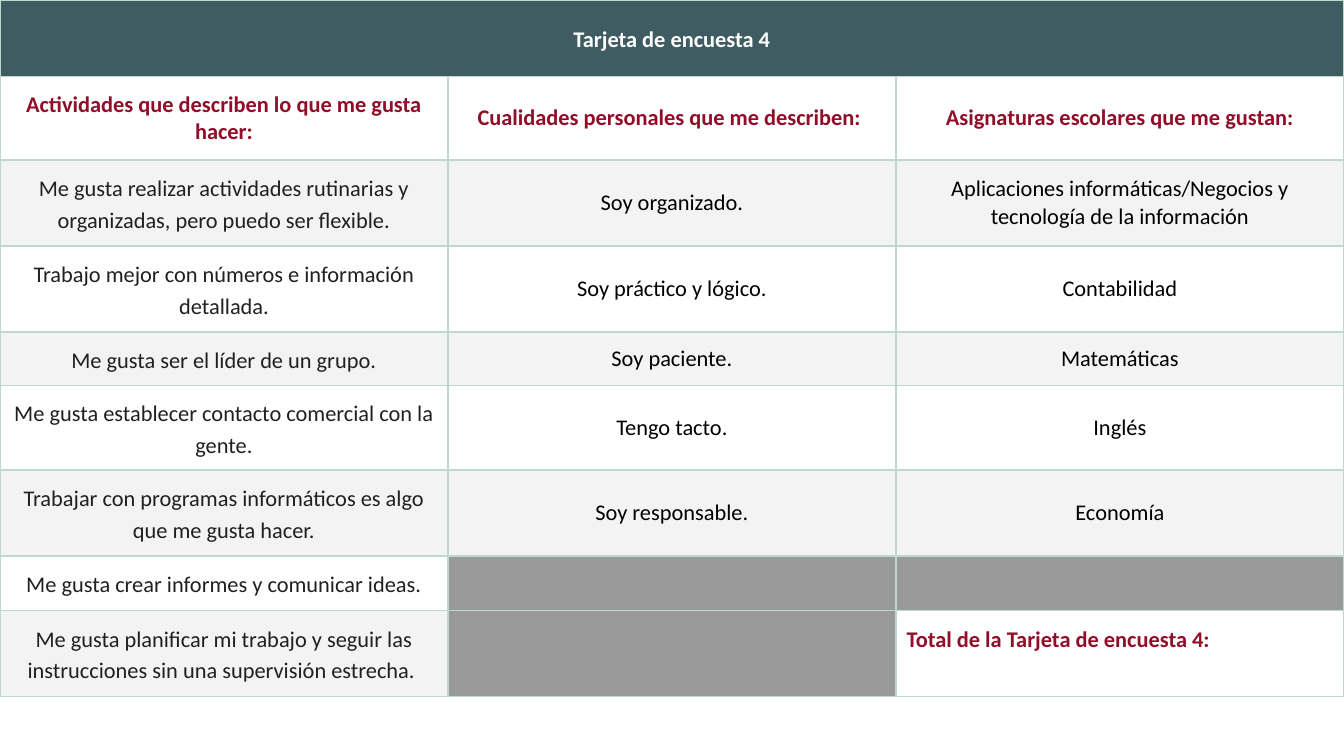
"""Builds a survey card slide as a three-column table."""
from pptx import Presentation
from pptx import util as u
from pptx.dml.color import RGBColor
from pptx.enum import text
from pptx.oxml import parse_xml
from pptx.oxml.ns import nsdecls

COLORS = {"white": "FFFFFF", "teal": "3E5C61", "red": "910D28", "band": "F3F3F3",
          "gray": "999999", "ink": "231F20", "black": "000000", "border": "BED7D3"}
WIDTH = u.Inches(10)
HEIGHT = WIDTH * 9 // 16
MARGIN = 0.08
ROW_HEIGHTS = [0.57, 0.62, 0.64, 0.64, 0.4, 0.53, 0.64, 0.4, 0.64]
TITLE = "Tarjeta de encuesta 4"
TOTAL = "Total de la Tarjeta de encuesta 4:"
HEADINGS = ["Actividades que describen lo que me gusta hacer:",
            "Cualidades personales que me describen: ",
            "Asignaturas escolares que me gustan:"]
ANSWERS = [
    ["Me gusta realizar actividades rutinarias y organizadas, pero puedo ser flexible.",
     "Soy organizado.", "Aplicaciones informáticas/Negocios y tecnología de la información"],
    ["Trabajo mejor con números e información detallada.",
     "Soy práctico y lógico.", "Contabilidad"],
    ["Me gusta ser el líder de un grupo.", "Soy paciente.", "Matemáticas"],
    ["Me gusta establecer contacto comercial con la gente.", "Tengo tacto.", "Inglés"],
    ["Trabajar con programas informáticos es algo que me gusta hacer.",
     "Soy responsable.", "Economía"],
    ["Me gusta crear informes y comunicar ideas.", "", ""],
    ["Me gusta planificar mi trabajo y seguir las instrucciones sin una supervisión estrecha. ",
     "", TOTAL],
]


def style_cell(cell, fill):
    properties = cell._tc.get_or_add_tcPr()
    for index, side in enumerate("LRTB"):
        properties.insert(index, parse_xml(
            f'<a:ln{side} {nsdecls("a")} w="{u.Pt(1)}"><a:solidFill>'
            f'<a:srgbClr val="{COLORS["border"]}"/></a:solidFill></a:ln{side}>'))
    cell.fill.solid()
    cell.fill.fore_color.rgb = RGBColor.from_string(COLORS[fill])


def write_cell(cell, words, color, bold=False, line_spacing=1.0, before=0, after=0,
               align=text.PP_ALIGN.CENTER, bottom=MARGIN):
    cell.margin_left = cell.margin_right = cell.margin_top = u.Inches(MARGIN)
    cell.margin_bottom = u.Inches(bottom)
    cell.vertical_anchor = text.MSO_ANCHOR.MIDDLE
    cell.text_frame.text = words
    paragraph = cell.text_frame.paragraphs[0]
    paragraph.alignment = align
    paragraph.line_spacing = line_spacing
    paragraph.space_before, paragraph.space_after = u.Pt(before), u.Pt(after)
    font = paragraph.runs[0].font
    font.name, font.size, font.bold = "Calibri", u.Pt(12), bold
    font.color.rgb = RGBColor.from_string(COLORS[color])


def add_grid(slide):
    frame = slide.shapes.add_table(len(ROW_HEIGHTS), len(HEADINGS), 0, 0, WIDTH,
                                   u.Inches(sum(ROW_HEIGHTS)))
    table = frame.table
    table.horz_banding = table.first_row = False
    for row, height in zip(table.rows, ROW_HEIGHTS):
        row.height = u.Inches(height)
    return table


def fill_headings(table):
    for column, heading in enumerate(HEADINGS):
        style_cell(table.cell(0, column), "teal")
        style_cell(table.cell(1, column), "white")
        write_cell(table.cell(1, column), heading, "red", bold=True, before=10)
    table.cell(0, 0).merge(table.cell(0, len(HEADINGS) - 1))
    write_cell(table.cell(0, 0), TITLE, "white", bold=True, line_spacing=1.15, after=6)


def fill_answers(table):
    for row, answers in enumerate(ANSWERS, start=2):
        band = "white" if row % 2 else "band"
        for column, words in enumerate(answers):
            cell = table.cell(row, column)
            if not words:
                style_cell(cell, "gray")
            elif words == TOTAL:
                style_cell(cell, "white")
                write_cell(cell, words, "red", bold=True, before=10,
                           align=text.PP_ALIGN.LEFT, bottom=0.28)
            else:
                style_cell(cell, band)
                write_cell(cell, words, "black" if column else "ink",
                           line_spacing=1.0 if column else 1.15)


def main():
    presentation = Presentation()
    presentation.slide_width, presentation.slide_height = WIDTH, HEIGHT
    slide = presentation.slides.add_slide(presentation.slide_layouts[6])
    table = add_grid(slide)
    fill_headings(table)
    fill_answers(table)
    presentation.save("out.pptx")


if __name__ == "__main__":
    main()
